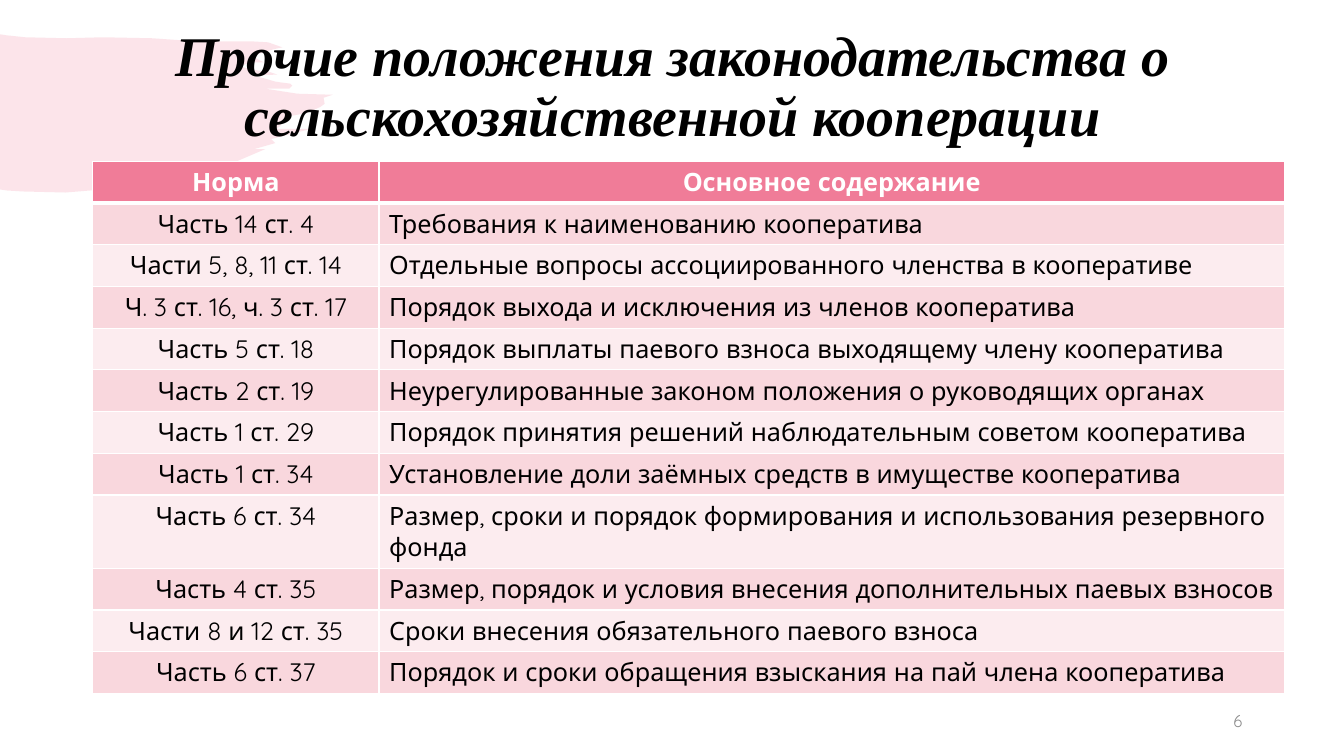
from dataclasses import dataclass

from lxml import etree
from pptx import Presentation
from pptx.dml.color import RGBColor
from pptx.enum.text import MSO_ANCHOR, MSO_AUTO_SIZE, PP_ALIGN
from pptx.oxml.ns import qn
from pptx.util import Inches, Pt

LEFT, CENTER, RIGHT = PP_ALIGN.LEFT, PP_ALIGN.CENTER, PP_ALIGN.RIGHT
MIDDLE = MSO_ANCHOR.MIDDLE
NO_AUTOFIT = MSO_AUTO_SIZE.NONE

TITLE = "Прочие положения законодательства о сельскохозяйственной кооперации"
PAGE_NUMBER = "6"
HEADER = ("Норма", "Основное содержание")
PROVISIONS = [
    ("Часть 14 ст. 4", "Требования к наименованию кооператива"),
    ("Части 5, 8, 11 ст. 14", "Отдельные вопросы ассоциированного членства в кооперативе"),
    ("Ч. 3 ст. 16, ч. 3 ст. 17", "Порядок выхода и исключения из членов кооператива"),
    ("Часть 5 ст. 18", "Порядок выплаты паевого взноса выходящему члену кооператива"),
    ("Часть 2 ст. 19", "Неурегулированные законом положения о руководящих органах"),
    ("Часть 1 ст. 29", "Порядок принятия решений наблюдательным советом кооператива"),
    ("Часть 1 ст. 34", "Установление доли заёмных средств в имуществе кооператива"),
    ("Часть 6 ст. 34", "Размер, сроки и порядок формирования и использования резервного фонда"),
    ("Часть 4 ст. 35", "Размер, порядок и условия внесения дополнительных паевых взносов"),
    ("Части 8 и 12 ст. 35", "Сроки внесения обязательного паевого взноса"),
    ("Часть 6 ст. 37", "Порядок и сроки обращения взыскания на пай члена кооператива"),
]
BRUSH_OUTLINE = [
    (0, 0.34), (0.06, 0.35), (0.25, 0.37), (0.66, 0.38), (1.02, 0.37), (1.51, 0.38),
    (1.94, 0.41), (2.48, 0.41), (2.66, 0.42), (2.8, 0.47), (2.71, 0.49), (2.55, 0.54),
    (2.53, 0.57), (2.56, 0.59), (2.62, 0.62), (2.48, 0.62), (2.38, 0.66), (2.46, 0.68),
    (2.56, 0.7), (2.66, 0.71), (2.75, 0.74), (2.51, 0.75), (2.63, 0.78), (2.73, 0.81),
    (2.8, 0.82), (2.88, 0.83), (2.9, 0.85), (2.87, 0.88), (2.84, 0.88), (2.63, 0.88),
    (2.95, 0.93), (3.3, 0.94), (3.21, 0.97), (3.22, 1.03), (3.18, 1.06), (3.07, 1.11),
    (3, 1.13), (2.83, 1.16), (2.8, 1.2), (2.78, 1.25), (2.74, 1.28), (3.08, 1.28),
    (2.69, 1.38), (2.73, 1.42), (2.52, 1.48), (2.63, 1.48), (2.35, 1.6), (1.97, 1.72),
    (1.5, 1.81), (1.02, 1.88), (0.65, 1.91), (0.23, 1.9), (0.07, 1.89), (0, 1.88),
]


@dataclass(frozen=True)
class Theme:
    accent: str = "F07C98"
    band_dark: str = "F9D7DD"
    band_light: str = "FCECEF"
    ink: str = "000000"
    paper: str = "FFFFFF"
    muted: str = "8C8C8C"
    title_font: str = "Times New Roman"
    body_font: str = "Quicksand"
    title_size: int = 40
    table_size: int = 18
    number_size: int = 12
    brush_opacity: int = 20


THEME = Theme()
TABLE_LEFT, TABLE_TOP = 0.92, 1.6
COLUMN_WIDTHS = (2.84, 8.98)
ROW_HEIGHT = 0.41


def write(frame, text, size=THEME.table_size, font=THEME.body_font, color=THEME.ink,
          bold=False, italic=False, align=LEFT, spacing=None):
    paragraph = frame.paragraphs[0]
    paragraph.alignment = align
    if spacing:
        paragraph.line_spacing = spacing
    run = paragraph.add_run()
    run.text = text
    run.font.size = Pt(size)
    run.font.name = font
    run.font.bold = bold
    run.font.italic = italic
    run.font.color.rgb = RGBColor.from_string(color)


def place(shape, left, top, width, height):
    shape.left, shape.top = Inches(left), Inches(top)
    shape.width, shape.height = Inches(width), Inches(height)


def set_borders(cell, widths):
    """Draw cell edges; widths maps L, R, T and B, in that order, to points."""
    properties = cell._tc.get_or_add_tcPr()
    for position, (side, width) in enumerate(widths.items()):
        edge = etree.Element(qn(f"a:ln{side}"), w=str(Pt(width)))
        fill = etree.SubElement(edge, qn("a:solidFill"))
        etree.SubElement(fill, qn("a:srgbClr"), val=THEME.paper)
        properties.insert(position, edge)


def add_brush(slide):
    points = [(Inches(x), Inches(y)) for x, y in BRUSH_OUTLINE]
    builder = slide.shapes.build_freeform(*points[0])
    builder.add_line_segments(points[1:], close=True)
    brush = builder.convert_to_shape()
    brush.shadow.inherit = False
    brush.line.fill.background()
    brush.fill.solid()
    brush.fill.fore_color.rgb = RGBColor.from_string(THEME.accent)
    color = brush.element.spPr.find(f"{qn('a:solidFill')}/{qn('a:srgbClr')}")
    etree.SubElement(color, qn("a:alpha"), val=str(THEME.brush_opacity * 1000))
    slide.shapes.title.element.addprevious(brush.element)


def add_title(slide):
    title = slide.shapes.title
    place(title, 0.92, 0.15, 11.5, 1.45)
    frame = title.text_frame
    frame.auto_size = NO_AUTOFIT
    frame.vertical_anchor = MIDDLE
    write(frame, TITLE, size=THEME.title_size, font=THEME.title_font,
          bold=True, italic=True, align=CENTER, spacing=0.9)


def add_provisions(slide):
    rows = [HEADER, *PROVISIONS]
    table = slide.shapes.add_table(
        len(rows), len(HEADER), Inches(TABLE_LEFT), Inches(TABLE_TOP),
        Inches(sum(COLUMN_WIDTHS)), Inches(ROW_HEIGHT * len(rows))).table
    table.horz_banding = False
    for column, width in zip(table.columns, COLUMN_WIDTHS):
        column.width = Inches(width)
    for r, texts in enumerate(rows):
        is_header = r == 0
        band = THEME.band_dark if r % 2 else THEME.band_light
        for c, text in enumerate(texts):
            cell = table.cell(r, c)
            cell.fill.solid()
            cell.fill.fore_color.rgb = RGBColor.from_string(
                THEME.accent if is_header else band)
            set_borders(cell, {"L": 1, "R": 1, "T": 3 if r == 1 else 1,
                               "B": 3 if is_header else 1})
            write(cell.text_frame, text, bold=is_header,
                  color=THEME.paper if is_header else THEME.ink,
                  align=CENTER if is_header or c == 0 else LEFT)


def add_page_number(slide):
    box = slide.shapes.add_textbox(Inches(9.42), Inches(6.95), Inches(3), Inches(0.4))
    frame = box.text_frame
    frame.word_wrap = True
    frame.vertical_anchor = MIDDLE
    write(frame, PAGE_NUMBER, size=THEME.number_size, color=THEME.muted, align=RIGHT)


def main():
    deck = Presentation()
    deck.slide_width, deck.slide_height = Inches(13.33), Inches(7.5)
    slide = deck.slides.add_slide(deck.slide_layouts.get_by_name("Title Only"))
    add_brush(slide)
    add_title(slide)
    add_provisions(slide)
    add_page_number(slide)
    deck.save("out.pptx")


if __name__ == "__main__":
    main()
